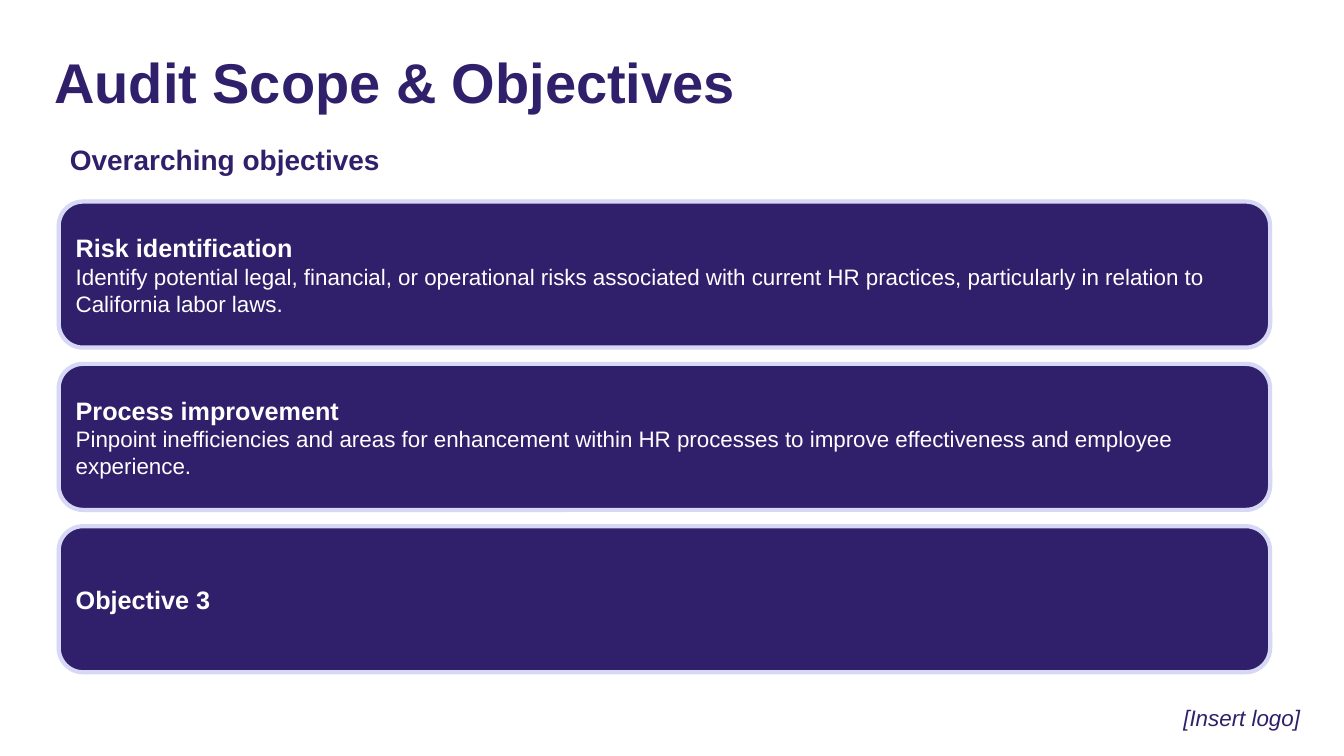
from pptx import Presentation
from pptx import util as u
from pptx.dml.color import RGBColor
from pptx.enum import shapes, text

FONT = "Arial"
INDIGO, LAVENDER, WHITE = "30206B", "D7D7F6", "FFFFFF"

OBJECTIVES = [
    ("Risk identification",
     "Identify potential legal, financial, or operational risks associated with "
     "current HR practices, particularly in relation to California labor laws."),
    ("Process improvement",
     "Pinpoint inefficiencies and areas for enhancement within HR processes to "
     "improve effectiveness and employee experience."),
    ("Objective 3", None),
]
CARD_LEFT, CARD_TOP, CARD_WIDTH, CARD_HEIGHT = 1.48, 5.08, 30.53, 3.68
CARD_STEP = 4.09


def color(value):
    return RGBColor.from_string(value)


def add_run(paragraph, content, size, hue, bold=False, italic=False):
    run = paragraph.add_run()
    run.text = content
    font = run.font
    font.name, font.size = FONT, u.Pt(size)
    font.bold, font.italic = bold, italic
    font.color.rgb = color(hue)


def add_label(slide, left, top, width, height, spacing,
              align=text.PP_ALIGN.LEFT, anchor=text.MSO_ANCHOR.TOP, inset=0):
    """Add an empty text box and return its paragraph."""
    box = slide.shapes.add_textbox(u.Cm(left), u.Cm(top), u.Cm(width), u.Cm(height))
    frame = box.text_frame
    frame.word_wrap = True
    frame.vertical_anchor = anchor
    frame.margin_left = u.Cm(inset)
    frame.margin_right = frame.margin_top = frame.margin_bottom = 0
    paragraph = frame.paragraphs[0]
    paragraph.alignment = align
    paragraph.line_spacing = spacing
    return paragraph


def add_card(slide, top, heading, detail):
    card = slide.shapes.add_shape(
        shapes.MSO_SHAPE.ROUNDED_RECTANGLE,
        u.Cm(CARD_LEFT), u.Cm(top), u.Cm(CARD_WIDTH), u.Cm(CARD_HEIGHT))
    card.shadow.inherit = False
    card.fill.solid()
    card.fill.fore_color.rgb = color(INDIGO)
    card.line.color.rgb = color(LAVENDER)
    card.line.width = u.Pt(3)
    frame = card.text_frame
    frame.word_wrap = True
    frame.vertical_anchor = text.MSO_ANCHOR.MIDDLE
    paragraph = frame.paragraphs[0]
    paragraph.alignment = text.PP_ALIGN.LEFT
    add_run(paragraph, heading, 18, WHITE, bold=True)
    if detail:
        paragraph = frame.add_paragraph()
        paragraph.alignment = text.PP_ALIGN.LEFT
        add_run(paragraph, detail, 16, WHITE)


def main():
    presentation = Presentation()
    presentation.slide_width, presentation.slide_height = u.Cm(33.87), u.Cm(19.05)
    slide = presentation.slides.add_slide(presentation.slide_layouts[6])

    # Title and subtitle
    title = add_label(slide, 1.37, 1.32, 31.17, 1.68, 0.9,
                      anchor=text.MSO_ANCHOR.MIDDLE)
    add_run(title, "Audit Scope & Objectives", 40, INDIGO, bold=True)
    subtitle = add_label(slide, 1.48, 3.48, 30.07, 1.17, 1.14, inset=0.28)
    add_run(subtitle, "Overarching objectives", 20, INDIGO, bold=True)

    # Logo placeholder: the large trailing space sets its line height
    logo = add_label(slide, 29.54, 17.07, 3.91, 1.12, 0.9,
                     align=text.PP_ALIGN.CENTER)
    add_run(logo, "[Insert logo]", 16, INDIGO, italic=True)
    add_run(logo, " ", 41, INDIGO)

    # Objective cards
    for index, (heading, detail) in enumerate(OBJECTIVES):
        add_card(slide, CARD_TOP + index * CARD_STEP, heading, detail)

    presentation.save("out.pptx")


if __name__ == "__main__":
    main()
